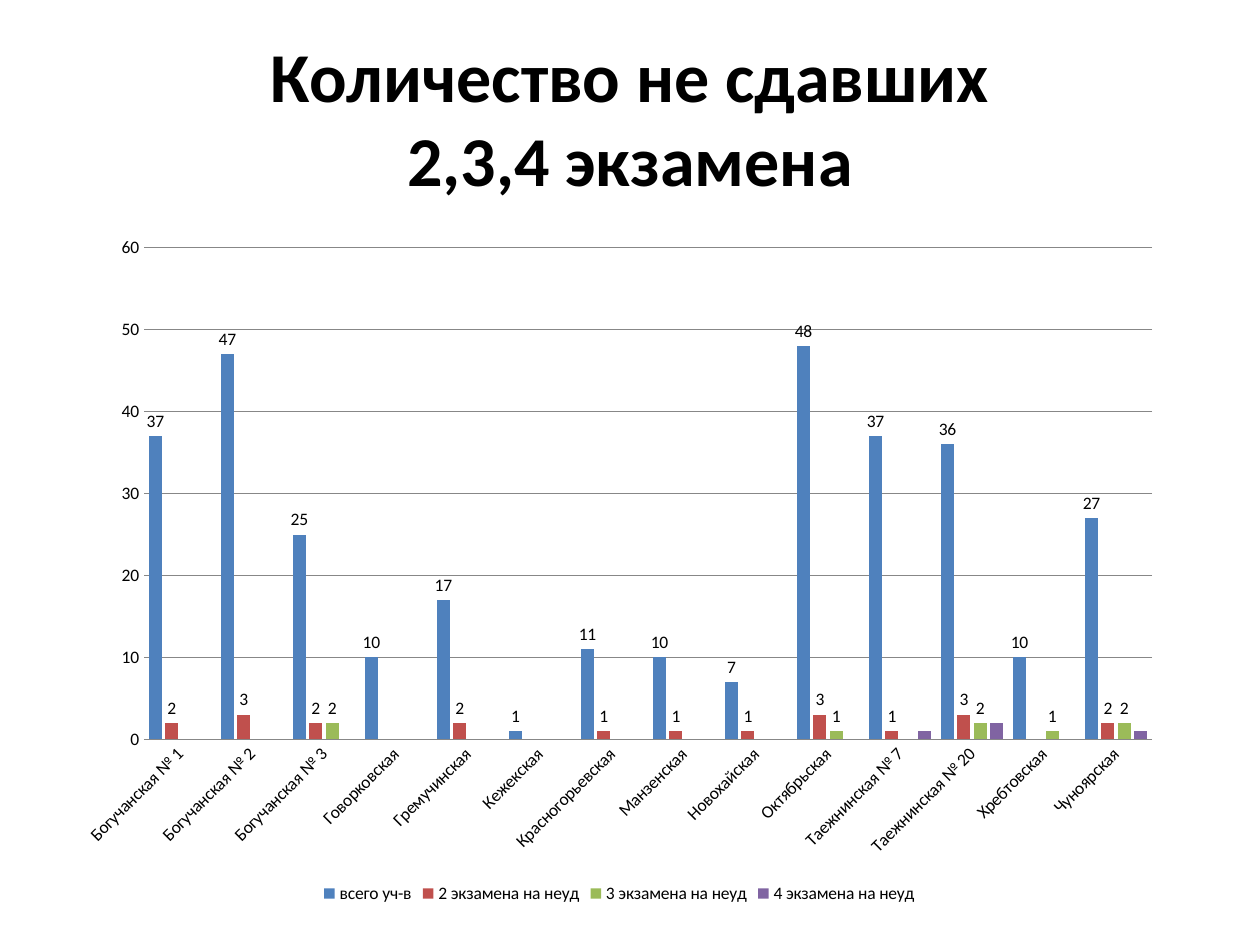
from pptx import Presentation
from pptx.chart.data import CategoryChartData
from pptx.dml.color import RGBColor
from pptx.enum.chart import XL_CHART_TYPE, XL_LABEL_POSITION, XL_LEGEND_POSITION, XL_TICK_MARK
from pptx.enum.text import MSO_ANCHOR, PP_ALIGN
from pptx.util import Emu, Pt

PX = 9144
FONT = "Calibri"
COLORS = {
    "text": "000000",
    "grid": "878787",
    "всего уч-в": "4F81BD",
    "2 экзамена на неуд": "C0504D",
    "3 экзамена на неуд": "9BBB59",
    "4 экзамена на неуд": "8064A2",
}


def px(*lengths):
    return [Emu(length * PX) for length in lengths]


def color(key):
    return RGBColor.from_string(COLORS[key])


results = [
    ("Богучанская № 1", 37, 2, None, None),
    ("Богучанская № 2", 47, 3, None, None),
    ("Богучанская № 3", 25, 2, 2, None),
    ("Говорковская", 10, None, None, None),
    ("Гремучинская", 17, 2, None, None),
    ("Кежекская", 1, None, None, None),
    ("Красногорьевская", 11, 1, None, None),
    ("Манзенская", 10, 1, None, None),
    ("Новохайская", 7, 1, None, None),
    ("Октябрьская", 48, 3, 1, None),
    ("Таежнинская № 7", 37, 1, None, 1),
    ("Таежнинская № 20", 36, 3, 2, 2),
    ("Хребтовская", 10, None, 1, None),
    ("Чуноярская", 27, 2, 2, 1),
]
schools, *counts = zip(*results)
groups = list(COLORS)[2:]

prs = Presentation()
prs.slide_width, prs.slide_height = px(1000, 750)
slide = prs.slides.add_slide(prs.slide_layouts[5])

heading = slide.shapes.title
heading.left, heading.top, heading.width, heading.height = px(50, 30, 900, 125)
heading.text_frame.vertical_anchor = MSO_ANCHOR.MIDDLE
heading_lines = heading.text_frame.paragraphs[0]
heading_lines.alignment = PP_ALIGN.CENTER
for number, line in enumerate(["Количество не сдавших", "2,3,4 экзамена"]):
    if number:
        heading_lines.add_line_break()
    run = heading_lines.add_run()
    run.text = line
    run.font.name = FONT
    run.font.size = Pt(40)
    run.font.bold = True
    run.font.color.rgb = color("text")

exam_data = CategoryChartData(number_format="General")
exam_data.categories = schools
for group, values in zip(groups, counts):
    exam_data.add_series(group, values)

exams = slide.shapes.add_chart(
    XL_CHART_TYPE.COLUMN_CLUSTERED, *px(51, 178, 881, 543), exam_data
).chart
exams.has_title = False
exams.font.name = FONT
exams.font.size = Pt(10)
exams.font.color.rgb = color("text")
exams.has_legend = True
exams.legend.position = XL_LEGEND_POSITION.BOTTOM
exams.legend.include_in_layout = False

school_axis, count_axis = exams.category_axis, exams.value_axis
for axis in (school_axis, count_axis):
    axis.major_tick_mark = XL_TICK_MARK.NONE
    axis.minor_tick_mark = XL_TICK_MARK.NONE
school_axis.format.line.color.rgb = color("grid")
count_axis.format.line.fill.background()
count_axis.minimum_scale = 0
count_axis.maximum_scale = 60
count_axis.major_unit = 10
count_axis.has_major_gridlines = True
count_axis.major_gridlines.format.line.color.rgb = color("grid")

columns = exams.plots[0]
columns.gap_width = 75
columns.overlap = -25
columns.vary_by_categories = False
for series in columns.series:
    series.format.fill.solid()
    series.format.fill.fore_color.rgb = color(series.name)
    if series.name != groups[-1]:
        series.data_labels.show_value = True
        series.data_labels.position = XL_LABEL_POSITION.OUTSIDE_END

prs.save("out.pptx")
